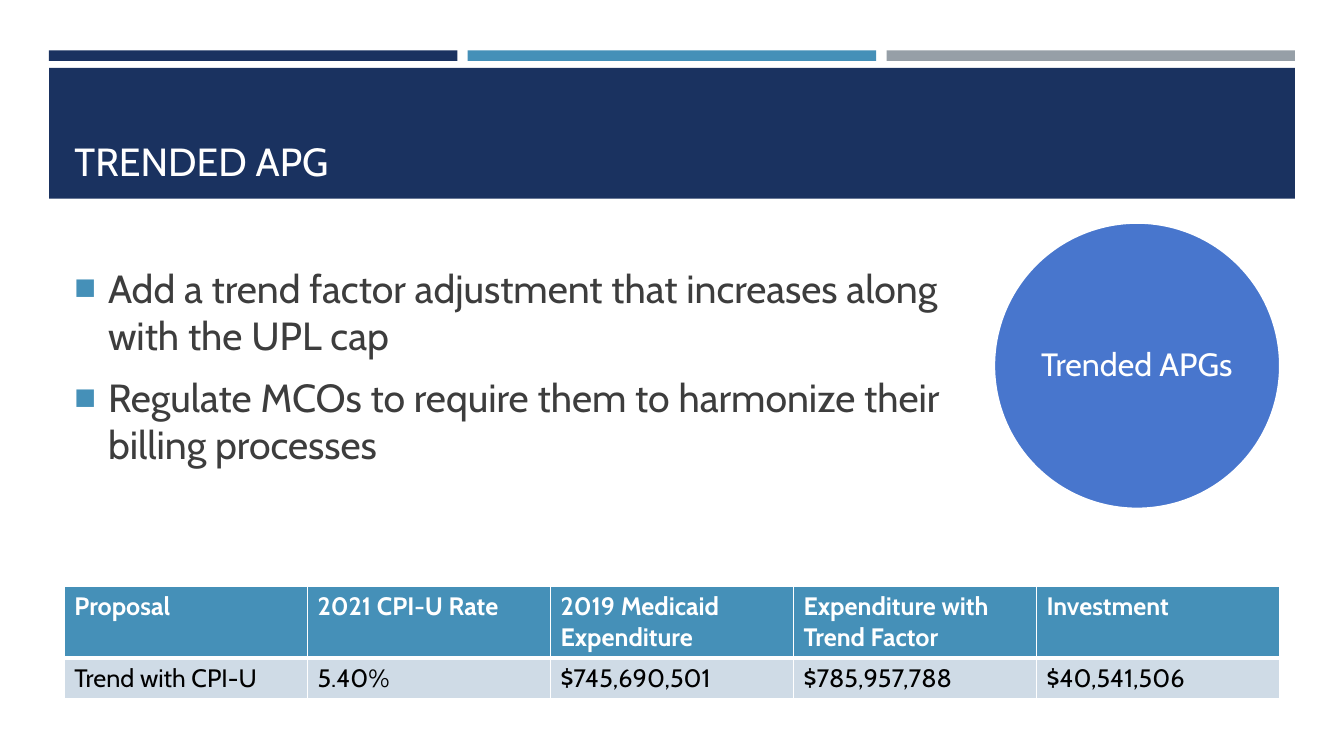
from lxml import etree
from pptx import Presentation
from pptx.dml.color import RGBColor
from pptx.enum import shapes, text
from pptx.oxml import ns
from pptx.util import Pt

FONT = "Cabin"
NAVY, BLUE, GREY, WHITE = "1A3260", "4590B8", "969FA7", "FFFFFF"
PROPOSALS = [
    ["Proposal", "2021 CPI-U Rate", "2019 Medicaid Expenditure",
     "Expenditure with Trend Factor", "Investment"],
    ["Trend with CPI-U", "5.40%", "$745,690,501", "$785,957,788", "$40,541,506"],
]
ACTIONS = [
    "Add a trend factor adjustment that increases along \vwith the UPL cap",
    "Regulate MCOs to require them to harmonize their \vbilling processes",
]


def color(hex_code):
    """Turn a hex string into a colour."""
    return RGBColor.from_string(hex_code)


def add_xml(parent, tag, **attributes):
    """Append a drawing element and return it."""
    child = etree.SubElement(parent, ns.qn(tag))
    for name, value in attributes.items():
        child.set(name, str(value))
    return child


def style_runs(paragraph, size, hex_code, bold=False):
    """Format every run of a paragraph."""
    for run in paragraph.runs:
        run.font.name = FONT
        run.font.size = Pt(size)
        run.font.bold = bold
        run.font.color.rgb = color(hex_code)


def place(item, left, top, width, height):
    """Move a placeholder to a box given in points and bring it to the front."""
    item.left, item.top = Pt(left), Pt(top)
    item.width, item.height = Pt(width), Pt(height)
    item.element.getparent().append(item.element)


def add_filled(slide, kind, box, hex_code):
    """Add a plain filled shape without line or shadow."""
    filled = slide.shapes.add_shape(kind, *map(Pt, box))
    filled.shadow.inherit = False
    filled.fill.solid()
    filled.fill.fore_color.rgb = color(hex_code)
    filled.line.fill.background()
    return filled


def add_header(slide, left, top, width, height):
    """Draw the three stripes and the title band."""
    gap, stripe_height, band_offset = 7.4, 7.5, 12.5
    stripe_width = (width - 2 * gap) / 3
    for index, hue in enumerate([NAVY, BLUE, GREY]):
        stripe_left = left + index * (stripe_width + gap)
        add_filled(slide, shapes.MSO_SHAPE.RECTANGLE,
                   (stripe_left, top, stripe_width, stripe_height), hue)
    band_height = height - band_offset
    add_filled(slide, shapes.MSO_SHAPE.RECTANGLE,
               (left, top + band_offset, width, band_height), NAVY)
    title = slide.shapes.title
    place(title, left + 11, top + band_offset + 7, width - 22, band_height - 14)
    title.text_frame.text = "TRENDED APG"
    title.text_frame.auto_size = text.MSO_AUTO_SIZE.NONE
    title.text_frame.vertical_anchor = text.MSO_ANCHOR.BOTTOM
    heading = title.text_frame.paragraphs[0]
    heading.alignment = text.PP_ALIGN.LEFT
    style_runs(heading, 28, WHITE)


def add_actions(slide, left, top, width, height):
    """Fill the body with square-bulleted actions."""
    body = slide.placeholders[1]
    place(body, left, top, width, height)
    frame = body.text_frame
    frame.text = "\n".join(ACTIONS)
    frame.auto_size = text.MSO_AUTO_SIZE.NONE
    frame.vertical_anchor = text.MSO_ANCHOR.MIDDLE
    for action in frame.paragraphs:
        action.space_before, action.space_after = Pt(5), Pt(6)
        style_runs(action, 28, "3D3D3D")
        props = action._p.get_or_add_pPr()
        props.set("marL", str(Pt(24)))
        props.set("indent", str(Pt(-24)))
        add_xml(add_xml(props, "a:buClr"), "a:srgbClr", val=BLUE)
        add_xml(props, "a:buSzPct", val=92000)
        add_xml(props, "a:buFont", typeface="Arial")
        add_xml(props, "a:buChar", char="■")


def add_badge(slide, left, top, diameter):
    """Draw the circle naming the proposal."""
    badge = add_filled(slide, shapes.MSO_SHAPE.OVAL,
                       (left, top, diameter, diameter), "4876CD")
    badge.line.color.rgb = color(WHITE)
    badge.line.width = Pt(1.75)
    frame = badge.text_frame
    frame.text = "Trended APGs"
    frame.margin_left = frame.margin_right = Pt(2)
    frame.margin_top = frame.margin_bottom = Pt(2)
    frame.vertical_anchor = text.MSO_ANCHOR.MIDDLE
    label = frame.paragraphs[0]
    label.alignment = text.PP_ALIGN.CENTER
    label.line_spacing = 0.9
    style_runs(label, 23, WHITE)


def add_borders(cell, bottom):
    """Give a cell white 1 pt borders and a bottom border of the given width."""
    props = cell._tc.get_or_add_tcPr()
    for side, weight in zip("LRTB", [1, 1, 1, bottom]):
        line = add_xml(props, f"a:ln{side}", w=Pt(weight))
        add_xml(add_xml(line, "a:solidFill"), "a:srgbClr", val=WHITE)


def add_costs(slide, left, top, width, heights):
    """Draw the table of proposal costs."""
    columns = len(PROPOSALS[0])
    costs = slide.shapes.add_table(len(PROPOSALS), columns, Pt(left), Pt(top),
                                   Pt(width), Pt(sum(heights))).table
    for column in costs.columns:
        column.width = Pt(width / columns)
    for row_index, (row, height) in enumerate(zip(PROPOSALS, heights)):
        is_header = row_index == 0
        costs.rows[row_index].height = Pt(height)
        for column_index, entry in enumerate(row):
            cell = costs.cell(row_index, column_index)
            cell.text_frame.text = entry
            add_borders(cell, 3 if is_header else 1)
            cell.fill.solid()
            cell.fill.fore_color.rgb = color(BLUE if is_header else "CFDBE6")
            style_runs(cell.text_frame.paragraphs[0], 18,
                       WHITE if is_header else "000000", is_header)


def main():
    """Build and save the slide."""
    deck = Presentation()
    deck.slide_width, deck.slide_height = Pt(960), Pt(540)
    slide = deck.slides.add_slide(deck.slide_layouts[1])
    add_header(slide, 35, 36, 890, 106)
    add_actions(slide, 46, 159, 868, 204.5)
    add_badge(slide, 710, 159, 204.5)
    add_costs(slide, 46, 419, 868, [50.5, 29.2])
    deck.save("out.pptx")


if __name__ == "__main__":
    main()
